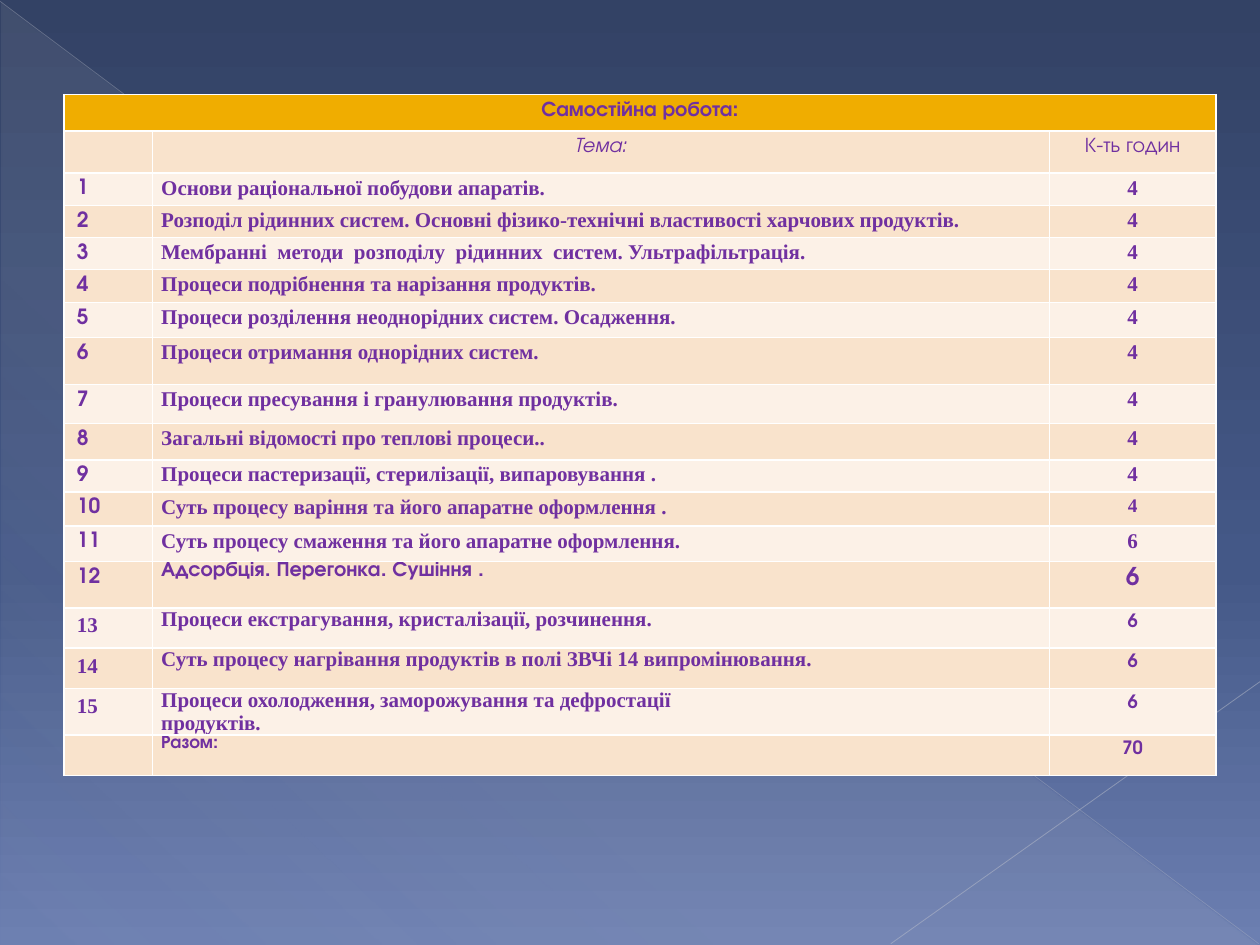
from dataclasses import dataclass

from lxml import etree
from pptx import Presentation
from pptx.dml.color import RGBColor
from pptx.enum.shapes import MSO_CONNECTOR, MSO_SHAPE
from pptx.enum.text import PP_ALIGN
from pptx.oxml import parse_xml
from pptx.oxml.ns import nsdecls, qn
from pptx.util import Inches, Pt

LEFT, MID = PP_ALIGN.LEFT, PP_ALIGN.CENTER
STRAIGHT = MSO_CONNECTOR.STRAIGHT
WEDGE = MSO_SHAPE.RIGHT_TRIANGLE
SANS, SERIF = "TeX Gyre Adventor", "Times New Roman"
HUES = {
    "top": "334265", "half": "445887", "base": "6C7FB1", "mist": "D4D4D6",
    "long": "B9BDC8", "short": "C1C4CE", "text": "7030A0", "edge": "FFFFFF",
    "head": "F0AD00", "dark": "F9E3CC", "light": "FCF1E7",
}
WIDTHS = (0.7, 7.12, 1.32)


@dataclass
class Entry:
    text: str = ""
    face: str = SANS
    size: float = 12
    bold: bool = True
    slant: bool = False
    align: int = LEFT
    tight: bool = False
    space: float | None = None


@dataclass
class Row:
    high: float
    items: tuple[Entry, ...]


@dataclass
class Ray:
    start: tuple[float, float]
    end: tuple[float, float]
    hue: str
    width: float
    alpha: int


def topic(num: int, high: float, text: str, hours: str = "4", size: float = 12) -> Row:
    return Row(high, (
        Entry(str(num)),
        Entry(text, SERIF, tight=True, space=1.15),
        Entry(hours, SERIF, size, align=MID, tight=True, space=1.15),
    ))


def late(num: str, high: float, text: str, hours: str = "6", size: float = 10.5,
         first: str = SERIF, face: str = SERIF, note: float = 12) -> Row:
    return Row(high, (
        Entry(num, first),
        Entry(text, face, note, tight=True),
        Entry(hours, SANS, size, align=MID),
    ))


ROWS = (
    Row(0.29, (Entry("Самостійна робота:", align=MID),)),
    Row(0.3, (
        Entry(size=18),
        Entry("Тема:", bold=False, slant=True, align=MID),
        Entry("К-ть годин", bold=False, align=MID),
    )),
    topic(1, 0.22, "Основи раціональної побудови апаратів."),
    topic(2, 0.23, "Розподіл рідинних систем. Основні фізико-технічні властивості харчових продуктів."),
    topic(3, 0.25, "Мембранні  методи  розподілу  рідинних  систем. Ультрафільтрація."),
    topic(4, 0.26, "Процеси подрібнення та нарізання продуктів."),
    topic(5, 0.28, "Процеси розділення неоднорідних систем. Осадження."),
    topic(6, 0.37, "Процеси отримання однорідних систем."),
    topic(7, 0.31, "Процеси пресування і гранулювання продуктів."),
    topic(8, 0.29, "Загальні відомості про теплові процеси.."),
    topic(9, 0.25, "Процеси пастеризації, стерилізації, випаровування ."),
    topic(10, 0.27, "Суть процесу варіння та його апаратне оформлення .", size=11),
    topic(11, 0.28, "Суть процесу смаження та його апаратне оформлення.", "6"),
    late("12", 0.37, "Адсорбція. Перегонка. Сушіння .", size=14, first=SANS, face=SANS),
    late("13", 0.32, "Процеси екстрагування, кристалізації, розчинення."),
    late("14", 0.32, "Суть процесу нагрівання продуктів в полі ЗВЧі 14 випромінювання."),
    late("15", 0.32, "Процеси охолодження, заморожування та дефростації\nпродуктів."),
    late("", 0.32, "Разом:", "70", first=SANS, face=SANS, note=10.5),
)
RAYS = (
    Ray((0, 0.01), (9.99, 7.49), "long", 0.39, 35),
    Ray((10, 5.41), (7.07, 7.49), "short", 0.47, 45),
)


def rgb(name: str) -> RGBColor:
    return RGBColor.from_string(HUES[name])


def blend(fill, node, stops: tuple[tuple[int, str, int], ...], angle: int) -> None:
    fill.solid()
    fill.fore_color.rgb = rgb(stops[0][1])
    marks = "".join(
        f'<a:gs pos="{pos * 1000}"><a:srgbClr val="{HUES[hue]}">'
        f'<a:alpha val="{alpha * 1000}"/></a:srgbClr></a:gs>'
        for pos, hue, alpha in stops
    )
    old = node.find(".//" + qn("a:solidFill"))
    old.getparent().replace(old, parse_xml(
        f'<a:gradFill {nsdecls("a")} rotWithShape="1"><a:gsLst>{marks}</a:gsLst>'
        f'<a:lin ang="{angle * 60000}" scaled="0"/></a:gradFill>'
    ))


def draw_ray(slide, ray: Ray) -> None:
    line = slide.shapes.add_connector(STRAIGHT, *map(Inches, ray.start + ray.end))
    line.line.color.rgb = rgb(ray.hue)
    line.line.width = Pt(ray.width)
    props = line._element.spPr
    tone = props.find(".//" + qn("a:srgbClr"))
    etree.SubElement(tone, qn("a:alpha")).set("val", str(ray.alpha * 1000))
    etree.SubElement(props, qn("a:effectLst"))


def draw_edge(cell) -> None:
    props = cell._tc.get_or_add_tcPr()
    for spot, side in enumerate(("lnL", "lnR", "lnT", "lnB")):
        props.insert(spot, parse_xml(
            f'<a:{side} {nsdecls("a")} w="{Pt(1)}"><a:solidFill>'
            f'<a:srgbClr val="{HUES["edge"]}"/></a:solidFill></a:{side}>'
        ))


def fill_cell(cell, entry: Entry, hue: str) -> None:
    cell.fill.solid()
    cell.fill.fore_color.rgb = rgb(hue)
    draw_edge(cell)
    if entry.tight:
        cell.margin_left = cell.margin_right = Inches(0.07)
        cell.margin_top = cell.margin_bottom = 0
    cell.text_frame.text = entry.text
    for para in cell.text_frame.paragraphs:
        para.alignment = entry.align
        if entry.space:
            para.line_spacing = entry.space
        for run in para.runs:
            font = run.font
            font.name, font.size = entry.face, Pt(entry.size)
            font.bold, font.italic = entry.bold, entry.slant
            font.color.rgb = rgb("text")
        if not para.runs:
            end = etree.SubElement(para._p, qn("a:endParaRPr"))
            end.set("sz", str(int(entry.size * 100)))
            etree.SubElement(end, qn("a:latin")).set("typeface", entry.face)


def draw_table(slide) -> None:
    high = sum(row.high for row in ROWS)
    table = slide.shapes.add_table(
        len(ROWS), len(WIDTHS), Inches(0.51), Inches(0.75),
        Inches(sum(WIDTHS)), Inches(high),
    ).table
    table.first_row = table.horz_banding = False
    for col, width in zip(table.columns, WIDTHS):
        col.width = Inches(width)
    table.cell(0, 0).merge(table.cell(0, len(WIDTHS) - 1))
    for at, row in enumerate(ROWS):
        table.rows[at].height = Inches(row.high)
        hue = "head" if at == 0 else "dark" if at % 2 else "light"
        for col, entry in enumerate(row.items):
            fill_cell(table.cell(at, col), entry, hue)
    for col in range(1, len(WIDTHS)):
        draw_edge(table.cell(0, col))


def main() -> None:
    deck = Presentation()
    deck.slide_width, deck.slide_height = Inches(10), Inches(7.5)
    slide = deck.slides.add_slide(deck.slide_layouts[6])
    blend(slide.background.fill, slide._element,
          ((0, "top", 100), (60, "half", 100), (100, "base", 100)), 90)
    wedge = slide.shapes.add_shape(
        WEDGE, Inches(0.01), Inches(0.02), Inches(9.98), Inches(7.48))
    wedge.shadow.inherit = False
    wedge.line.fill.background()
    blend(wedge.fill, wedge._element,
          ((0, "mist", 10), (70, "mist", 8), (100, "mist", 1)), 133)
    for ray in RAYS:
        draw_ray(slide, ray)
    draw_table(slide)
    deck.save("out.pptx")


if __name__ == "__main__":
    main()
